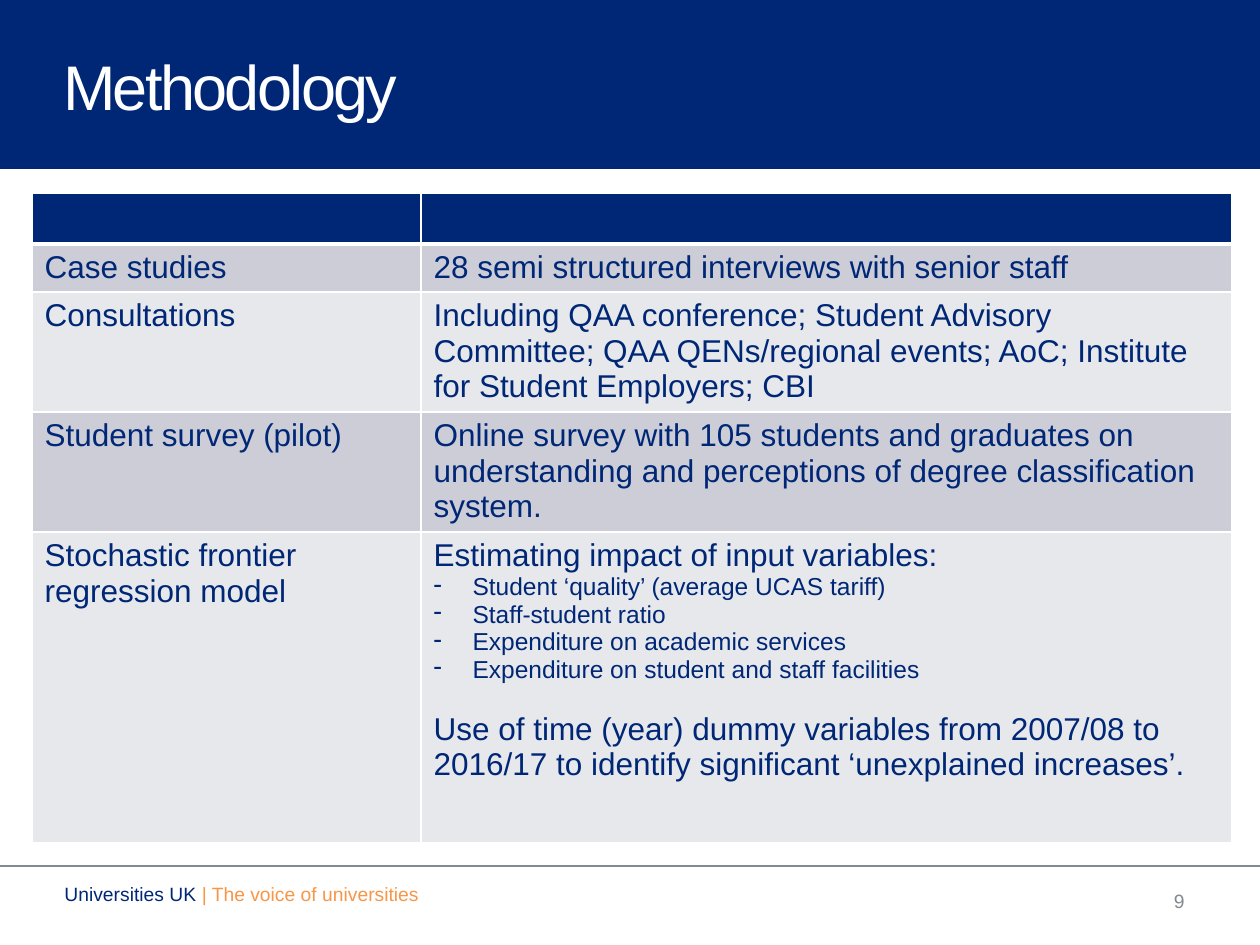
import pptx
import pptx.util
import pptx.dml.color
import pptx.enum.shapes
import pptx.enum.text
import pptx.oxml.ns
from lxml import etree

NAVY, WHITE, GREY, ORANGE = "002776", "FFFFFF", "818A8F", "F79646"
BANDS = ["CCCDD6", "E7E8EC"]
FONT = "Arial"

# Content: each cell is a list of paragraphs, each a (text, format) pair
BULLET = {"size": 14, "bullet": "-"}
ROWS = [
    ([("", {})], [("", {})]),
    ([("Case studies", {})],
     [("28 semi structured interviews with senior staff", {})]),
    ([("Consultations", {})],
     [("Including QAA conference; Student Advisory Committee; QAA QENs/regional "
       "events; AoC; Institute for Student Employers; CBI", {})]),
    ([("Student survey (pilot)", {})],
     [("Online survey with 105 students and graduates on understanding and "
       "perceptions of degree classification system.", {})]),
    ([("Stochastic frontier regression model", {})],
     [("Estimating impact of input variables:", {}),
      ("Student ‘quality’ (average UCAS tariff)", BULLET),
      ("Staff-student ratio", BULLET),
      ("Expenditure on academic services", BULLET),
      ("Expenditure on student and staff facilities", BULLET),
      ("Use of time (year) dummy variables from 2007/08 to 2016/17 to identify "
       "significant ‘unexplained increases’.", {"before": 16})]),
]
COLUMN_WIDTHS = [389, 811]
ROW_HEIGHTS = [48, 48, 120, 120, 311]
FOOTER = [("Universities UK ", NAVY), ("| The voice of universities", ORANGE)]


def px(length):
    return round(length * 914400 / 126)


def rgb(colour):
    return pptx.dml.color.RGBColor.from_string(colour)


def add_child(parent, tag, **attributes):
    return etree.SubElement(parent, pptx.oxml.ns.qn(tag), **attributes)


def write(paragraph, text, size=18, colour=NAVY, align=None, bullet=None,
          before=0, spacing=None):
    """Append a formatted run to a paragraph."""
    if bullet:
        properties = paragraph._p.get_or_add_pPr()
        properties.set("marL", str(px(39)))
        properties.set("indent", str(-px(39)))
        add_child(properties, "a:buChar", char=bullet)
    if before:
        paragraph.space_before = pptx.util.Pt(before)
    if align is not None:
        paragraph.alignment = align
    if not text:
        paragraph.font.size = pptx.util.Pt(size)
        return
    run = paragraph.add_run()
    run.text = text
    run.font.name = FONT
    run.font.size = pptx.util.Pt(size)
    run.font.color.rgb = rgb(colour)
    if spacing is not None:
        run.font._element.set("spc", str(round(spacing * 100)))


def set_borders(cell, **widths):
    """Draw white borders, given in points by side, below the cell's fill."""
    properties = cell._tc.get_or_add_tcPr()
    for index, (side, width) in enumerate(widths.items()):
        line = etree.Element(pptx.oxml.ns.qn(f"a:ln{side}"),
                             w=str(pptx.util.Pt(width)))
        add_child(add_child(line, "a:solidFill"), "a:srgbClr", val=WHITE)
        properties.insert(index, line)


def add_text_box(slide, left, top, width, height, anchor):
    box = slide.shapes.add_textbox(px(left), px(top), px(width), px(height))
    box.text_frame.word_wrap = True
    box.text_frame.vertical_anchor = anchor
    return box.text_frame.paragraphs[0]


presentation = pptx.Presentation()
presentation.slide_width, presentation.slide_height = px(1260), px(945)
slide = presentation.slides.add_slide(presentation.slide_layouts[5])
ANCHOR = pptx.enum.text.MSO_ANCHOR
ALIGN = pptx.enum.text.PP_ALIGN

# Title band, placed behind the title
band = slide.shapes.add_shape(
    pptx.enum.shapes.MSO_SHAPE.RECTANGLE, 0, 0, px(1260), px(169))
band.shadow.inherit = False
band.fill.solid()
band.fill.fore_color.rgb = rgb(NAVY)
band.line.fill.background()
title = slide.shapes.title
title._element.addprevious(band._element)

# Title
title.left, title.top, title.width, title.height = map(px, (63, 24, 757, 122))
frame = title.text_frame
frame.margin_left = 0
frame.auto_size = pptx.enum.text.MSO_AUTO_SIZE.NONE
frame.vertical_anchor = ANCHOR.MIDDLE
write(frame.paragraphs[0], "Methodology", size=36, colour=WHITE,
      align=ALIGN.LEFT, spacing=-1.5)

# Methods table
table = slide.shapes.add_table(
    len(ROWS), len(COLUMN_WIDTHS), px(32), px(193),
    px(sum(COLUMN_WIDTHS)), px(sum(ROW_HEIGHTS))).table
table.horz_banding = False
for column, width in zip(table.columns, COLUMN_WIDTHS):
    column.width = px(width)
for index, (row, height) in enumerate(zip(table.rows, ROW_HEIGHTS)):
    row.height = px(height)
    for cell, content in zip(row.cells, ROWS[index]):
        cell.fill.solid()
        cell.fill.fore_color.rgb = rgb(BANDS[(index - 1) % 2] if index else NAVY)
        set_borders(cell, L=1, R=1, T=3 if index == 1 else 1,
                    B=1 if index else 3)
        for number, (text, style) in enumerate(content):
            frame = cell.text_frame
            paragraph = frame.add_paragraph() if number else frame.paragraphs[0]
            write(paragraph, text, **style)

# Footer rule
rule = slide.shapes.add_connector(
    pptx.enum.shapes.MSO_CONNECTOR.STRAIGHT, 0, px(866), px(1260), px(866))
rule.line.color.rgb = rgb(GREY)
rule.line.width = pptx.util.Pt(0.75)
add_child(rule._element.spPr, "a:effectLst")

# Footer text and page number
page_number = add_text_box(slide, 903, 876, 294, 50, ANCHOR.MIDDLE)
write(page_number, "9", size=11, colour=GREY, align=ALIGN.RIGHT)
footer = add_text_box(slide, 52, 876, 399, 50, ANCHOR.TOP)
for text, colour in FOOTER:
    write(footer, text, size=11, colour=colour)

presentation.save("out.pptx")
